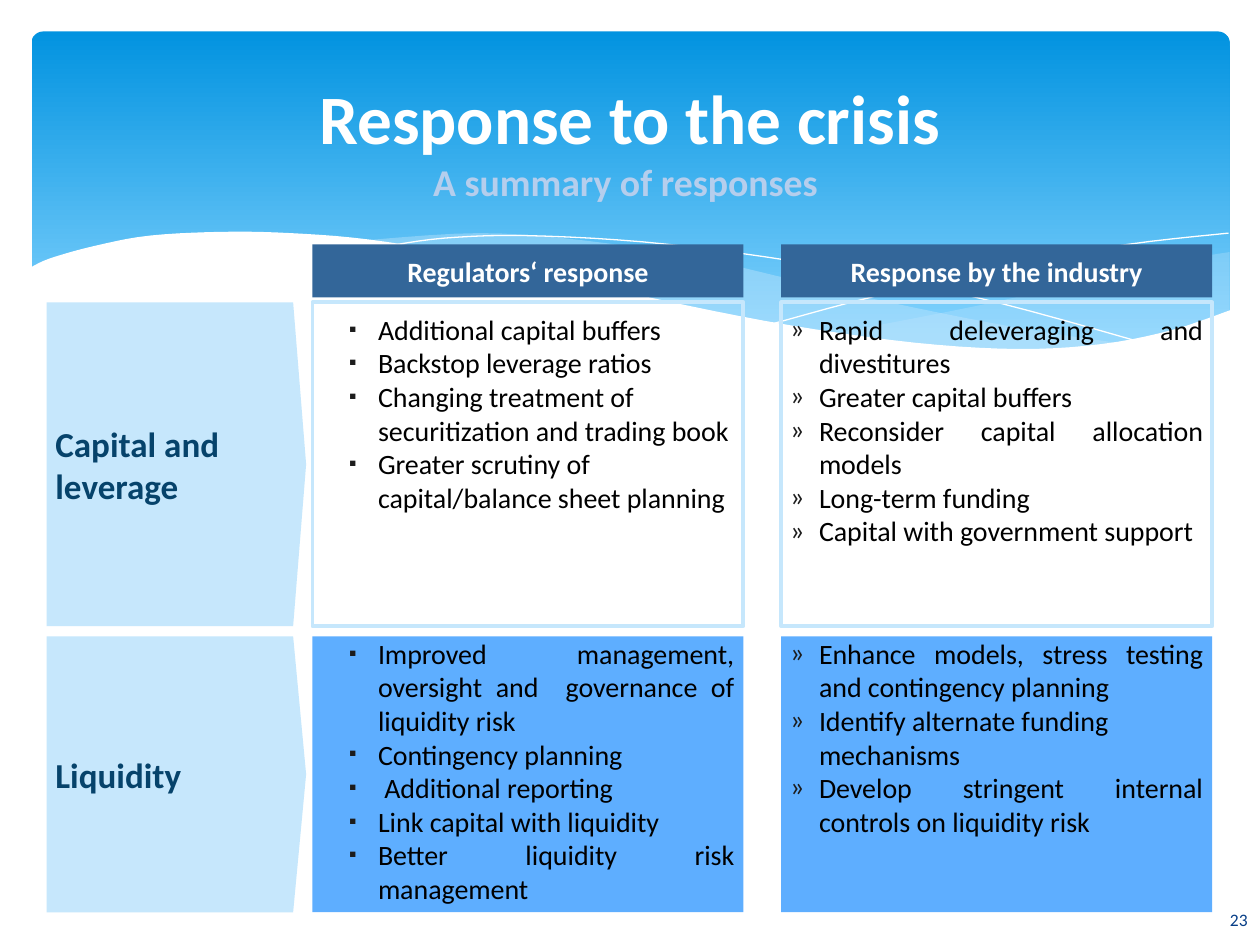
from dataclasses import dataclass

from lxml import etree
from pptx import Presentation
from pptx.dml.color import RGBColor
from pptx.enum.shapes import MSO_SHAPE as SHAPE
from pptx.enum.text import MSO_ANCHOR as ANCHOR, PP_ALIGN as ALIGN
from pptx.oxml.ns import qn
from pptx.util import Inches, Pt


@dataclass(frozen=True)
class Theme:
    font: str = "Calibri"
    sky: str = "0293E0"
    sky_light: str = "83D3FE"
    pale: str = "C6E7FC"
    panel: str = "5EAEFF"
    header: str = "336699"
    label: str = "06436B"
    subtitle: str = "B5CEED"
    number: str = "073E87"
    bullet: str = "1C1C1C"
    white: str = "FFFFFF"
    black: str = "000000"
    title_size: float = 39.6
    subtitle_size: float = 21.6
    label_size: float = 20
    body_size: float = 16
    number_size: float = 10


T = Theme()

# Grid: column lefts, column width, row tops and heights
LABEL_X, LABEL_W = 0.37, 2.06
COLUMNS, COL_W = (2.48, 6.2), 3.42
HEADER_Y, HEADER_H = 1.94, 0.42
ROWS = ((2.4, 2.57), (5.05, 2.19))

HEADERS = ("Regulators‘ response", "Response by the industry")
LABELS = ("Capital and leverage", "Liquidity")
J, L = ALIGN.JUSTIFY, ALIGN.LEFT
# One list per cell: rows of (regulators, industry)
CELLS = (
    (
        ((J, "Additional capital buffers "),
         (J, "Backstop leverage ratios"),
         (L, "Changing treatment of securitization and trading book"),
         (L, "Greater scrutiny of capital/balance sheet planning")),
        ((J, "Rapid deleveraging and divestitures"),
         (J, "Greater capital buffers"),
         (J, "Reconsider capital allocation models"),
         (J, "Long-term funding"),
         (J, "Capital with government support")),
    ),
    (
        ((J, "Improved management, oversight and  governance of liquidity risk"),
         (J, "Contingency planning"),
         (J, " Additional reporting"),
         (J, "Link capital with liquidity"),
         (J, "Better liquidity risk management")),
        ((J, "Enhance models, stress testing and contingency planning"),
         (L, "Identify alternate funding mechanisms"),
         (J, "Develop stringent internal controls on liquidity risk")),
    ),
)
# Bullet character, left margin in inches, size in percent
BULLETS = (("▪", 0.45, 75), ("»", 0.23, 100))

# Key points of the wave outlines; each curve is smoothed through them
RIGHT_TOP = ((9.76, 2), (9.35, 2.07), (8.61, 2.23), (7.79, 2.42), (6.61, 2.65))
RIGHT_BOTTOM = ((6.61, 2.65), (7.32, 2.74), (8.14, 2.78), (8.81, 2.73),
                (9.35, 2.62), (9.76, 2.47))
BAND_TOP = ((8.93, 2.73), (8.07, 2.6), (7.06, 2.4), (6.29, 2.22), (5.55, 2.05),
            (4.65, 1.91), (3.8, 1.85), (2.86, 1.91))
BAND_BOTTOM = ((2.86, 1.91), (3.62, 2.03), (4.49, 2.22), (5.66, 2.48),
               (6.65, 2.66), (7.48, 2.76), (8.18, 2.78), (8.93, 2.73))
LONG_LINE = ((3.09, 1.95), (3.53, 1.89), (4.16, 1.87), (5.1, 1.92), (6.08, 2.04),
             (6.95, 2.19), (7.95, 2.41), (9.07, 2.72))
SHORT_LINE = ((6.13, 2.57), (6.95, 2.35), (8.06, 2.1), (8.95, 1.94), (9.75, 1.85))
GROUND = ((9.77, 2.46), (9.3, 2.62), (8.75, 2.73), (8.09, 2.77), (7.26, 2.72),
          (6.26, 2.58), (5.29, 2.39), (4.47, 2.2), (3.65, 2.02), (2.92, 1.9),
          (2.3, 1.85), (1.77, 1.84), (1.19, 1.87), (0.76, 1.95), (0.4, 2.05),
          (0.23, 2.13))


def rgb(color):
    return RGBColor.from_string(color)


def smooth(points, steps=5):
    """Catmull-Rom curve through the points."""
    pts = [points[0], *points, points[-1]]
    curve = [points[0]]
    for a, b, c, d in zip(pts, pts[1:], pts[2:], pts[3:]):
        for t in (i / steps for i in range(1, steps + 1)):
            curve.append(tuple(
                (2 * q + (r - p) * t + (2 * p - 5 * q + 4 * r - s) * t ** 2
                 + (3 * q - p - 3 * r + s) * t ** 3) / 2
                for p, q, r, s in zip(a, b, c, d)))
    return curve


def paint(sp, fill=None, line=None, width=0, alpha=None):
    sp.shadow.inherit = False
    if fill:
        sp.fill.solid()
        sp.fill.fore_color.rgb = rgb(fill)
        if alpha:
            color = sp.fill._xPr.find(".//" + qn("a:srgbClr"))
            etree.SubElement(color, qn("a:alpha"), val=str(alpha * 1000))
    else:
        sp.fill.background()
    if line:
        sp.line.color.rgb = rgb(line)
        sp.line.width = Pt(width)
    else:
        sp.line.fill.background()


def add_wave(shapes, points, closed=True, **style):
    start, *rest = [(Inches(x), Inches(y)) for x, y in points]
    builder = shapes.build_freeform(*start, scale=1.0)
    builder.add_line_segments(rest, close=closed)
    paint(builder.convert_to_shape(), **style)


def add_box(shapes, kind, x, y, w, h, **style):
    sp = shapes.add_shape(kind, Inches(x), Inches(y), Inches(w), Inches(h))
    paint(sp, **style)
    return sp


def add_textbox(shapes, x, y, w, h):
    return shapes.add_textbox(Inches(x), Inches(y), Inches(w), Inches(h))


def set_frame(sp, anchor, side=0.07, top=0.0):
    tf = sp.text_frame
    tf.word_wrap = True
    tf.vertical_anchor = anchor
    tf.margin_left = tf.margin_right = Inches(side)
    tf.margin_top = tf.margin_bottom = Inches(top)
    return tf


def add_paragraph(tf, text, size, color, align=ALIGN.LEFT, bold=False):
    p = tf.paragraphs[0] if not tf.paragraphs[0].runs else tf.add_paragraph()
    p.alignment = align
    r = p.add_run()
    r.text = text
    r.font.name, r.font.size, r.font.bold = T.font, Pt(size), bold
    r.font.color.rgb = rgb(color)
    return p


def set_bullet(p, char, margin, percent):
    pPr = p._p.get_or_add_pPr()
    pPr.set("marL", str(Inches(margin)))
    pPr.set("indent", str(Inches(-0.23)))
    color = etree.SubElement(pPr, qn("a:buClr"))
    etree.SubElement(color, qn("a:srgbClr"), val=T.bullet)
    etree.SubElement(pPr, qn("a:buSzPct"), val=str(percent * 1000))
    etree.SubElement(pPr, qn("a:buFont"), typeface=T.font)
    etree.SubElement(pPr, qn("a:buChar"), char=char)


def add_background(shapes):
    sky = add_box(shapes, SHAPE.ROUNDED_RECTANGLE, 0.25, 0.25, 9.51, 2.7)
    sky.adjustments[0] = 0.034
    sky.fill.gradient()
    sky.fill.gradient_angle = 270
    for stop, color, pos in zip(sky.fill.gradient_stops, (T.sky, T.sky_light), (0, 0.9)):
        stop.color.rgb, stop.position = rgb(color), pos
    add_wave(shapes, smooth(RIGHT_TOP) + smooth(RIGHT_BOTTOM), fill=T.pale, alpha=29)
    add_wave(shapes, smooth(BAND_TOP) + smooth(BAND_BOTTOM), fill=T.pale, alpha=40)
    for line in (LONG_LINE, SHORT_LINE):
        add_wave(shapes, smooth(line), closed=False, line=T.white)
    add_wave(shapes, smooth(GROUND) + [(0.23, 3.29), (9.77, 3.29)], fill=T.white)


def add_title(shapes):
    tf = set_frame(add_textbox(shapes, 0.5, 0.25, 9, 1.37), ANCHOR.BOTTOM)
    add_paragraph(tf, "Response to the crisis", T.title_size, T.white, ALIGN.CENTER, True)
    add_paragraph(tf, "A summary of responses ", T.subtitle_size, T.subtitle,
                  ALIGN.CENTER, True)


def add_label(shapes, text, y, h):
    sp = add_box(shapes, SHAPE.PENTAGON, LABEL_X, y, LABEL_W, h, fill=T.pale)
    sp.adjustments[0] = 0.05
    tf = set_frame(sp, ANCHOR.MIDDLE, top=0.07)
    add_paragraph(tf, text, T.label_size, T.label, bold=True)


def add_header(shapes, text, x):
    sp = add_box(shapes, SHAPE.RECTANGLE, x, HEADER_Y, COL_W, HEADER_H, fill=T.header)
    tf = set_frame(sp, ANCHOR.MIDDLE)
    add_paragraph(tf, text, T.body_size, T.white, ALIGN.CENTER, True)


def add_cell(shapes, items, bullet, x, y, h, top, style):
    sp = add_box(shapes, SHAPE.RECTANGLE, x, y, COL_W, h, **style)
    tf = set_frame(sp, ANCHOR.TOP, top=top)
    for align, text in items:
        set_bullet(add_paragraph(tf, text, T.body_size, T.black, align), *bullet)


def main():
    prs = Presentation()
    prs.slide_width, prs.slide_height = Inches(10), Inches(7.5)
    shapes = prs.slides.add_slide(prs.slide_layouts[6]).shapes

    add_background(shapes)
    add_title(shapes)

    # Response matrix: outlined first row, filled second row
    looks = ((0.08, dict(line=T.pale, width=2.25)), (0, dict(fill=T.panel)))
    for label, (y, h), cells, (top, style) in zip(LABELS, ROWS, CELLS, looks):
        add_label(shapes, label, y, h)
        for x, items, bullet in zip(COLUMNS, cells, BULLETS):
            add_cell(shapes, items, bullet, x, y, h, top, style)
    for x, text in zip(COLUMNS, HEADERS):
        add_header(shapes, text, x)

    # Slide number
    tf = set_frame(add_textbox(shapes, 8.73, 7.1, 1.27, 0.4), ANCHOR.MIDDLE, side=0.1)
    add_paragraph(tf, "23", T.number_size, T.number, ALIGN.RIGHT)

    prs.save("out.pptx")


if __name__ == "__main__":
    main()
